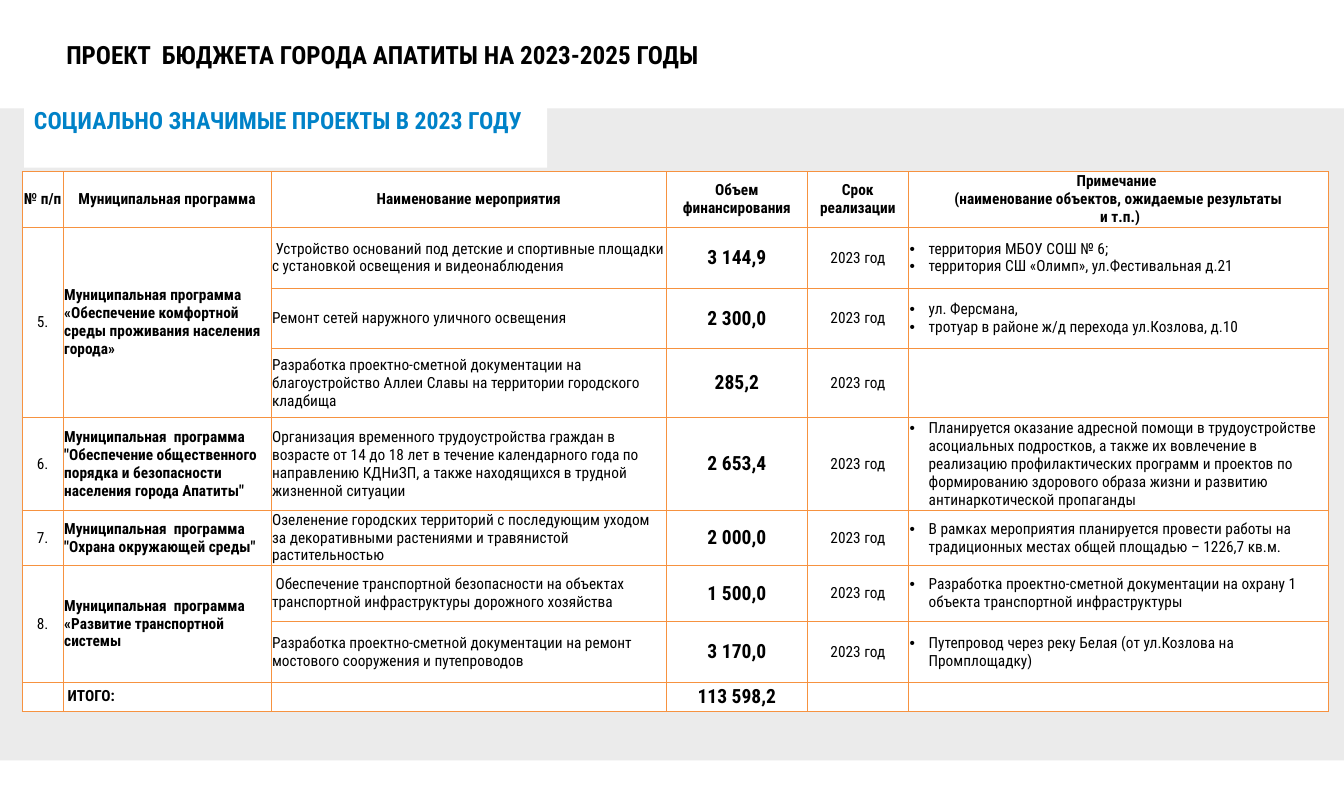
from lxml.etree import SubElement
from pptx import Presentation
from pptx.dml.color import RGBColor
from pptx.enum.shapes import MSO_SHAPE as Shape
from pptx.enum.text import MSO_ANCHOR as Anchor, MSO_AUTO_SIZE as AutoSize, PP_ALIGN as Align
from pptx.oxml import parse_xml
from pptx.oxml.ns import nsdecls, qn
from pptx.util import Cm, Inches, Pt

WHITE = RGBColor(0xFF, 0xFF, 0xFF)
BLACK = RGBColor(0, 0, 0)
PANEL_GRAY = RGBColor(0xEB, 0xEB, 0xEB)
HEADING_BLUE = RGBColor(0x00, 0x82, 0xC8)
BORDER_ORANGE = RGBColor(0xF6, 0x92, 0x40)

COLUMN_WIDTHS = [0.41, 2.07, 3.94, 1.4, 1.01, 4.18]
ROW_HEIGHTS = [0.38, 0.61, 0.6, 0.69, 0.76, 0.47, 0.56, 0.6, 0.29]
NUMBER, PROGRAM, EVENT, AMOUNT, TERM, NOTE = range(6)
YEAR = "2023 год"

HEADER = [
    "№ п/п", "Муниципальная программа", "Наименование мероприятия",
    "Объем финансирования", "Срок реализации",
    "Примечание \n(наименование объектов, ожидаемые результаты\n и т.п.)",
]
PROGRAMS = [
    ("5.", "Муниципальная программа «Обеспечение комфортной среды проживания населения города»", [
        (" Устройство оснований под детские и спортивные площадки с установкой освещения "
         "и видеонаблюдения", "3 144,9",
         "территория МБОУ СОШ № 6;\nтерритория СШ «Олимп», ул.Фестивальная д.21"),
        ("Ремонт сетей наружного уличного освещения", "2 300,0",
         "ул. Ферсмана,\nтротуар в районе ж/д перехода ул.Козлова, д.10"),
        ("Разработка проектно-сметной документации на благоустройство Аллеи Славы "
         "на территории городского кладбища", "285,2", ""),
    ]),
    ("6.", "Муниципальная  программа \"Обеспечение общественного порядка и безопасности "
     "населения города Апатиты\"", [
        ("Организация временного трудоустройства граждан в возрасте от 14 до 18 лет в течение "
         "календарного года по направлению КДНиЗП, а также находящихся в трудной жизненной ситуации",
         "2 653,4",
         "Планируется оказание адресной помощи в трудоустройстве асоциальных подростков, а также "
         "их вовлечение в реализацию профилактических программ и проектов по формированию здорового "
         "образа жизни и развитию антинаркотической пропаганды"),
    ]),
    ("7.", "Муниципальная  программа \"Охрана окружающей среды\"", [
        ("Озеленение городских территорий с последующим уходом за декоративными растениями "
         "и травянистой растительностью", "2 000,0",
         "В рамках мероприятия планируется провести работы на традиционных местах общей площадью "
         "– 1226,7 кв.м."),
    ]),
    ("8.", "Муниципальная  программа «Развитие транспортной системы", [
        (" Обеспечение транспортной безопасности на объектах транспортной инфраструктуры "
         "дорожного хозяйства", "1 500,0",
         "Разработка проектно-сметной документации на охрану 1 объекта транспортной инфраструктуры"),
        ("Разработка проектно-сметной документации на ремонт мостового сооружения и путепроводов",
         "3 170,0", "Путепровод через реку Белая (от ул.Козлова на Промплощадку)"),
    ]),
]
TOTAL = ["", " ИТОГО:", "", "113 598,2", "", ""]


class BudgetPage:
    font_name = "Roboto Condensed"

    def __init__(self, deck):
        self.page = deck.slides.add_slide(deck.slide_layouts[5])

    def style(self, frame, size, color=BLACK, bold=False, align=Align.LEFT):
        for paragraph in frame.paragraphs:
            paragraph.alignment = align
            for span in paragraph.runs:
                span.font.name = self.font_name
                span.font.size = Pt(size)
                span.font.bold = bold
                span.font.color.rgb = color

    def title(self, text, left, top, width, height):
        box = self.page.shapes.title
        box.left, box.top, box.width, box.height = map(Inches, (left, top, width, height))
        frame = box.text_frame
        frame.text = text
        frame.word_wrap = True
        frame.auto_size = AutoSize.SHAPE_TO_FIT_TEXT
        frame.vertical_anchor = Anchor.TOP
        self.style(frame, 18, bold=True)

    def panel(self, left, top, width, height, color):
        box = self.page.shapes.add_shape(Shape.RECTANGLE, *map(Inches, (left, top, width, height)))
        box.shadow.inherit = False
        box.fill.solid()
        box.fill.fore_color.rgb = color
        box.line.fill.background()
        return box

    def heading(self, text, left, top, width, height):
        frame = self.panel(left, top, width, height, WHITE).text_frame
        frame.text = text
        frame.word_wrap = True
        frame.vertical_anchor = Anchor.TOP
        self.style(frame, 17, HEADING_BLUE, bold=True)

    def borders(self, cell):
        properties = cell._tc.get_or_add_tcPr()
        for index, side in enumerate(("lnL", "lnR", "lnT", "lnB")):
            properties.insert(index, parse_xml(
                f'<a:{side} {nsdecls("a")} w="{Pt(0.75)}"><a:solidFill>'
                f'<a:srgbClr val="{BORDER_ORANGE}"/></a:solidFill></a:{side}>'))

    def bullets(self, frame):
        for paragraph in frame.paragraphs:
            properties = paragraph._p.get_or_add_pPr()
            properties.set("marL", str(Inches(0.19)))
            properties.set("indent", str(-Inches(0.19)))
            SubElement(properties, qn("a:buFont")).set("typeface", "Arial")
            SubElement(properties, qn("a:buChar")).set("char", "•")

    def cell(self, cell, text, column, header=False):
        cell.fill.solid()
        cell.fill.fore_color.rgb = WHITE
        self.borders(cell)
        cell.margin_left = cell.margin_right = Inches(0.01)
        cell.margin_top = cell.margin_bottom = 0
        cell.vertical_anchor = Anchor.MIDDLE
        frame = cell.text_frame
        frame.text = text
        if not text:
            SubElement(frame.paragraphs[0]._p, qn("a:endParaRPr")).set("sz", "1100")
        elif column == NOTE and not header:
            self.bullets(frame)
        centered = header or column in (NUMBER, AMOUNT, TERM)
        self.style(frame, 14 if column == AMOUNT and not header else 11,
                   bold=header or column in (PROGRAM, AMOUNT),
                   align=Align.CENTER if centered else Align.LEFT)

    def table(self, left, top, rows, groups):
        grid = self.page.shapes.add_table(
            len(rows), len(COLUMN_WIDTHS), Inches(left), Inches(top),
            Inches(sum(COLUMN_WIDTHS)), Inches(sum(ROW_HEIGHTS))).table
        grid.first_row = grid.horz_banding = False
        for column, width in zip(grid.columns, COLUMN_WIDTHS):
            column.width = Inches(width)
        for row, height in zip(grid.rows, ROW_HEIGHTS):
            row.height = Inches(height)
        for row, texts in enumerate(rows):
            for column, text in enumerate(texts):
                self.cell(grid.cell(row, column), text, column, header=row == 0)
        for first, last in groups:
            for column in (NUMBER, PROGRAM):
                grid.cell(first, column).merge(grid.cell(last, column))


def main():
    deck = Presentation()
    deck.slide_width, deck.slide_height = Cm(34), Cm(20)
    rows, groups = [HEADER], []
    for number, program, events in PROGRAMS:
        if len(events) > 1:
            groups.append((len(rows), len(rows) + len(events) - 1))
        for index, (event, amount, note) in enumerate(events):
            labels = ["", ""] if index else [number, program]
            rows.append(labels + [event, amount, YEAR, note])
    rows.append(TOTAL)

    budget = BudgetPage(deck)
    budget.panel(0, 1.08, 13.39, 6.49, PANEL_GRAY)
    budget.table(0.22, 1.71, rows, groups)
    budget.title("ПРОЕКТ  БЮДЖЕТА ГОРОДА АПАТИТЫ НА 2023-2025 ГОДЫ", 0.56, 0.34, 8.98, 0.4)
    budget.heading("СОЦИАЛЬНО ЗНАЧИМЫЕ ПРОЕКТЫ В 2023 ГОДУ", 0.24, 1, 5.21, 0.67)
    deck.save("out.pptx")


if __name__ == "__main__":
    main()
